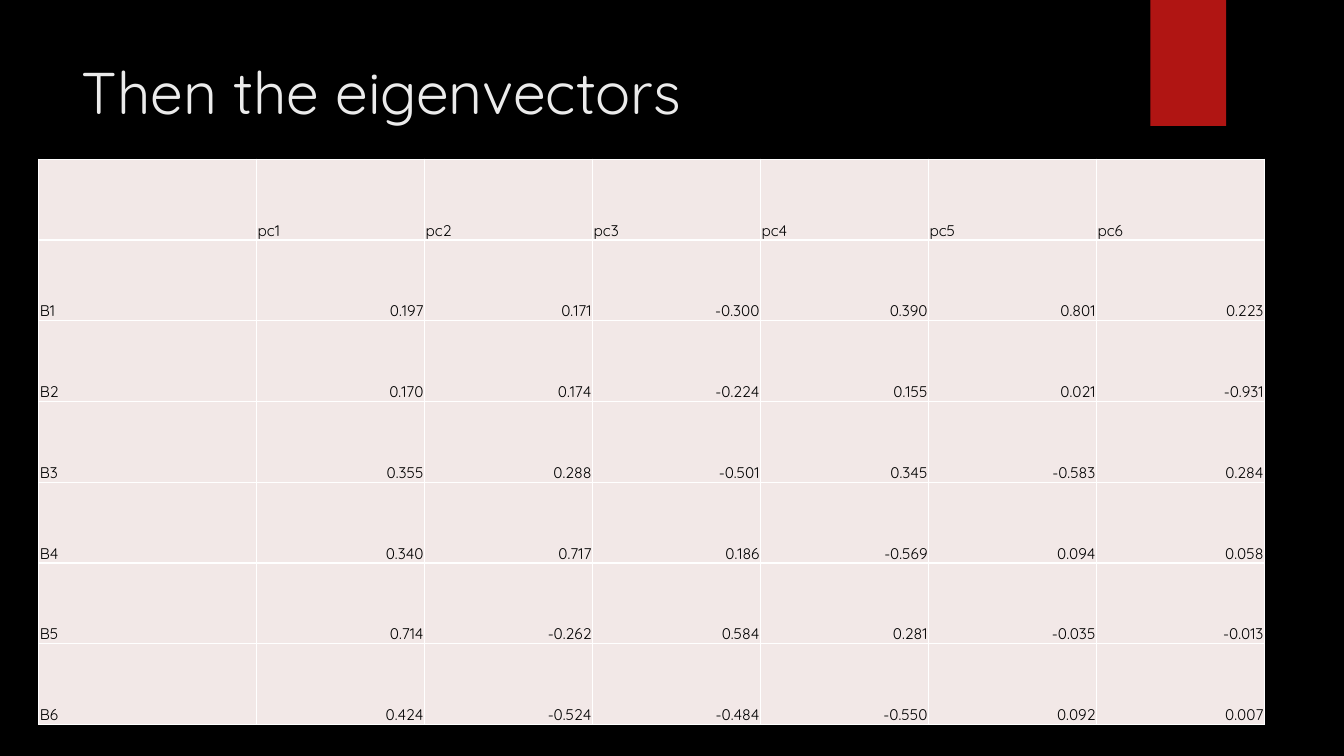
from dataclasses import dataclass

from lxml import etree
from pptx import Presentation
from pptx.dml.color import RGBColor
from pptx.enum.shapes import MSO_SHAPE
from pptx.enum.text import MSO_ANCHOR, PP_ALIGN
from pptx.oxml.ns import qn
from pptx.slide import Slide
from pptx.table import _Cell
from pptx.text.text import _Paragraph
from pptx.util import Inches, Pt

RECTANGLE = MSO_SHAPE.RECTANGLE
TOP, BOTTOM = MSO_ANCHOR.TOP, MSO_ANCHOR.BOTTOM
LEFT, RIGHT = PP_ALIGN.LEFT, PP_ALIGN.RIGHT

BLACK = RGBColor(0x00, 0x00, 0x00)
WHITE = RGBColor(0xFF, 0xFF, 0xFF)
RED = RGBColor(0xB0, 0x15, 0x13)
PALE_GREY = RGBColor(0xEB, 0xEB, 0xEB)
PALE_PINK = RGBColor(0xF2, 0xE8, 0xE7)

FONT = "Quicksand"
SLIDE_WIDTH, SLIDE_HEIGHT = Inches(13.33), Inches(7.5)
CELL_INSET = Inches(0.01)
LABEL_COLUMN, VALUE_COLUMN = 16.2, 12.5


def across(percent: float) -> int:
    return round(SLIDE_WIDTH * percent / 100)


def down(percent: float) -> int:
    return round(SLIDE_HEIGHT * percent / 100)


@dataclass(frozen=True)
class Box:
    left: float
    top: float
    width: float
    height: float

    def emu(self) -> tuple[int, int, int, int]:
        return across(self.left), down(self.top), across(self.width), down(self.height)


@dataclass(frozen=True)
class Band:
    name: str
    loadings: tuple[float, ...]


TITLE_BOX = Box(5.33, 6.67, 77.18, 20.4)
RIBBON_BOX = Box(85.6, 0, 5.63, 16.67)
TABLE_BOX = Box(2.89, 21.07, 91.2, 74.8)

COMPONENTS = ("pc1", "pc2", "pc3", "pc4", "pc5", "pc6")
BANDS = (
    Band("B1", (0.197, 0.171, -0.300, 0.390, 0.801, 0.223)),
    Band("B2", (0.170, 0.174, -0.224, 0.155, 0.021, -0.931)),
    Band("B3", (0.355, 0.288, -0.501, 0.345, -0.583, 0.284)),
    Band("B4", (0.340, 0.717, 0.186, -0.569, 0.094, 0.058)),
    Band("B5", (0.714, -0.262, 0.584, 0.281, -0.035, -0.013)),
    Band("B6", (0.424, -0.524, -0.484, -0.550, 0.092, 0.007)),
)


def set_font(p: _Paragraph, size: float, color: RGBColor) -> None:
    p.font.name = FONT
    p.font.size = Pt(size)
    p.font.color.rgb = color


def add_ribbon(s: Slide) -> None:
    sp = s.shapes.add_shape(RECTANGLE, *RIBBON_BOX.emu())
    sp.shadow.inherit = False
    sp.fill.solid()
    sp.fill.fore_color.rgb = RED
    sp.line.fill.background()


def set_title(s: Slide, text: str) -> None:
    sp = s.shapes.title
    sp.left, sp.top, sp.width, sp.height = TITLE_BOX.emu()
    tf = sp.text_frame
    tf.word_wrap = True
    tf.vertical_anchor = TOP
    p = tf.paragraphs[0]
    p.text = text
    p.alignment = LEFT
    set_font(p, 42, PALE_GREY)


def set_borders(cell: _Cell) -> None:
    props = cell._tc.get_or_add_tcPr()
    for position, side in enumerate(("a:lnL", "a:lnR", "a:lnT", "a:lnB")):
        line = etree.Element(qn(side), w=str(Pt(1)))
        fill = etree.SubElement(line, qn("a:solidFill"))
        etree.SubElement(fill, qn("a:srgbClr"), val=str(WHITE))
        props.insert(position, line)


def fill_cell(cell: _Cell, text: str, alignment: PP_ALIGN) -> None:
    cell.fill.solid()
    cell.fill.fore_color.rgb = PALE_PINK
    set_borders(cell)
    cell.vertical_anchor = BOTTOM
    cell.margin_left = cell.margin_right = cell.margin_top = CELL_INSET
    cell.margin_bottom = 0
    p = cell.text_frame.paragraphs[0]
    p.text = text
    p.alignment = alignment
    set_font(p, 11, BLACK)


def add_eigenvectors(s: Slide) -> None:
    rows = [("", *COMPONENTS)]
    rows += [(band.name, *(f"{v:.3f}" for v in band.loadings)) for band in BANDS]
    table = s.shapes.add_table(len(rows), len(rows[0]), *TABLE_BOX.emu()).table
    table.first_row = table.horz_banding = False
    for i, column in enumerate(table.columns):
        column.width = across(VALUE_COLUMN if i else LABEL_COLUMN)
    for i, row in enumerate(rows):
        for j, text in enumerate(row):
            fill_cell(table.cell(i, j), text, RIGHT if i and j else LEFT)


def main() -> None:
    prs = Presentation()
    prs.slide_width, prs.slide_height = SLIDE_WIDTH, SLIDE_HEIGHT
    s = prs.slides.add_slide(prs.slide_layouts[5])
    s.background.fill.solid()
    s.background.fill.fore_color.rgb = BLACK
    add_ribbon(s)
    set_title(s, "Then the eigenvectors")
    add_eigenvectors(s)
    prs.save("out.pptx")


if __name__ == "__main__":
    main()
